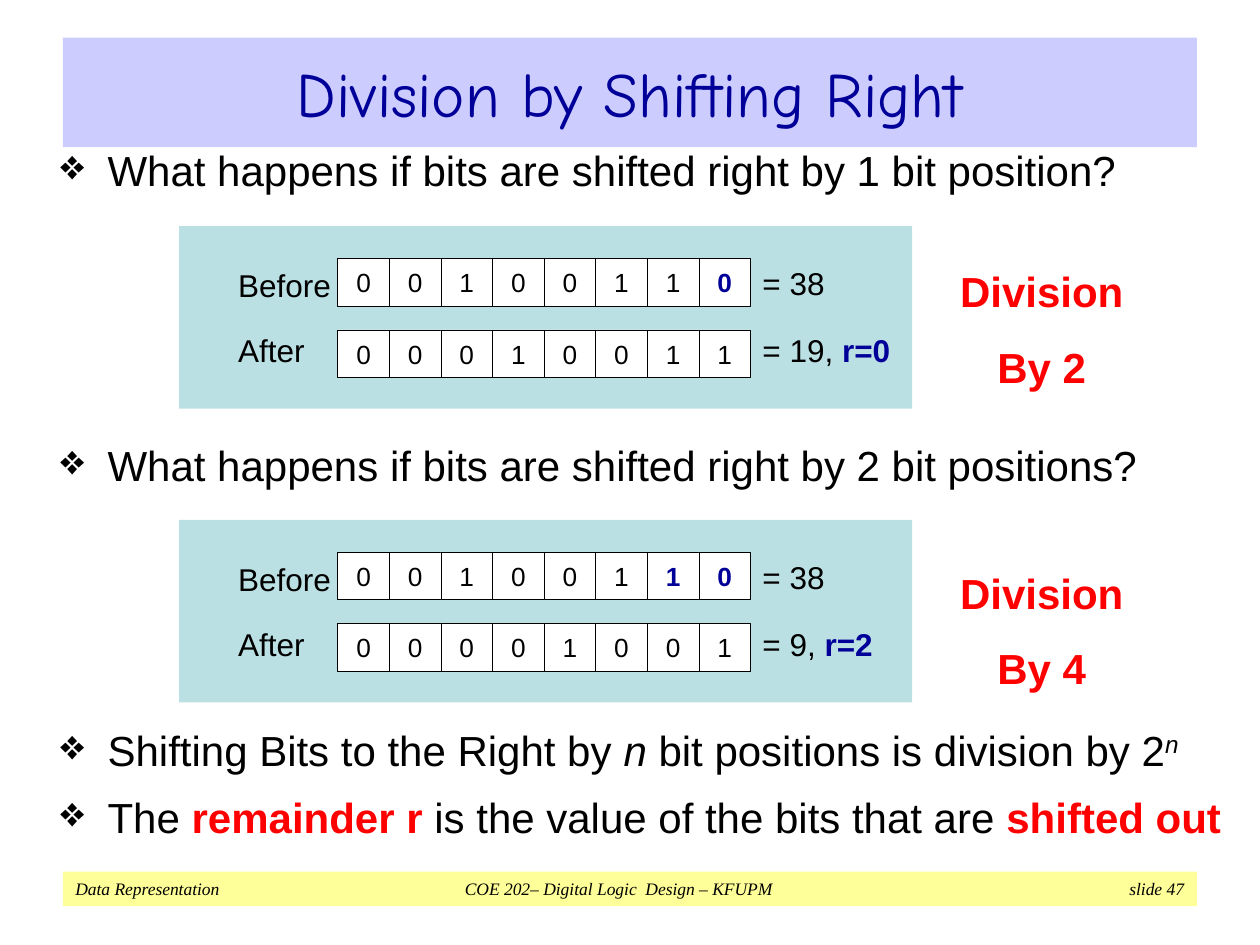
from lxml import etree
from pptx import Presentation
from pptx import util as u
from pptx.dml import color
from pptx.enum import shapes, text
from pptx.oxml import ns

COLORS = {"black": "000000", "white": "FFFFFF", "navy": "000099", "red": "FF0000",
          "title": "CCCCFF", "panel": "BBE0E3", "footer": "FFFF99"}


def add_box(parent, left, top, width, height, fill=None, inset=0, wrap=True):
    position = [u.Cm(value) for value in (left, top, width, height)]
    if fill:
        shape = parent.add_shape(shapes.MSO_SHAPE.RECTANGLE, *position)
        shape.shadow.inherit = False
        shape.fill.solid()
        shape.fill.fore_color.rgb = color.RGBColor.from_string(COLORS[fill])
        shape.line.fill.background()
    else:
        shape = parent.add_textbox(*position)
    frame = shape.text_frame
    frame.word_wrap = wrap
    frame.vertical_anchor = text.MSO_ANCHOR.TOP
    frame.margin_left = frame.margin_right = u.Cm(inset)
    frame.margin_top = frame.margin_bottom = u.Cm(inset / 2)
    return shape


def write(paragraph, pieces, size, font="Arial", align=text.PP_ALIGN.LEFT):
    paragraph.alignment = align
    for words, hue, style in pieces:
        run = paragraph.add_run()
        run.text = words
        run.font.name = font
        run.font.size = u.Pt(size)
        run.font.color.rgb = color.RGBColor.from_string(COLORS[hue])
        run.font.bold = "bold" in style
        run.font.italic = "italic" in style
        if "super" in style:
            run.font._element.set("baseline", "30000")


presentation = Presentation()
presentation.slide_width = u.Cm(25.4)
presentation.slide_height = u.Cm(19.05)
slide = presentation.slides.add_slide(presentation.slide_layouts[6])

footer = add_box(slide.shapes, 1.27, 17.57, 22.86, 0.7, "footer", 0.25)
paragraph = footer.text_frame.paragraphs[0]
footer_text = "Data Representation\tCOE 202– Digital Logic  Design – KFUPM\tslide 47"
write(paragraph, [(footer_text, "black", "italic")], 10, "Times New Roman")
tabs = etree.SubElement(paragraph._p.get_or_add_pPr(), ns.qn("a:tabLst"))
for position, kind in ((10.95, "ctr"), (22.35, "r")):
    etree.SubElement(tabs, ns.qn("a:tab"), pos=str(u.Cm(position)), algn=kind)

title = add_box(slide.shapes, 1.27, 0.76, 22.86, 2.21, "title", 0.25)
title.text_frame.vertical_anchor = text.MSO_ANCHOR.MIDDLE
write(title.text_frame.paragraphs[0], [("Division by Shifting Right", "navy", "")],
      36, "Comic Neue", text.PP_ALIGN.CENTER)

bullet_blocks = [
    (2.79, 23.16, 1.45,
     [[("What happens if bits are shifted right by 1 bit position?", "black", "")]]),
    (8.74, 23.16, 1.45,
     [[("What happens if bits are shifted right by 2 bit positions?", "black", "")]]),
    (14.48, 24.23, 2.87,
     [[("Shifting Bits to the Right by ", "black", ""), ("n", "black", "italic"),
       (" bit positions is division by 2", "black", ""), ("n", "black", "italic super")],
      [("The ", "black", ""), ("remainder r ", "red", "bold"),
       ("is the value of the bits that are ", "black", ""), ("shifted out", "red", "bold")]]),
]
for top, width, height, lines in bullet_blocks:
    frame = add_box(slide.shapes, 0.97, top, width, height, inset=0.25).text_frame
    for index, pieces in enumerate(lines):
        paragraph = frame.add_paragraph() if index else frame.paragraphs[0]
        write(paragraph, pieces, 24)
        paragraph.space_before = u.Pt(9.6)
        properties = paragraph._p.get_or_add_pPr()
        properties.set("marL", str(u.Cm(0.95)))
        properties.set("indent", str(u.Cm(-0.95)))
        etree.SubElement(properties, ns.qn("a:buChar"), char="❖")

examples = [
    (4.56, 4.72, "By 2", 1, "00100110", "00010011", "= 19, ", "r=0"),
    (10.48, 10.8, "By 4", 2, "00100110", "00001001", "= 9, ", "r=2"),
]
for top, label_top, divisor, shift, before, after, quotient, remainder in examples:
    panel = slide.shapes.add_group_shape().shapes
    add_box(panel, 3.61, top, 14.78, 3.68, "panel")
    for row_top, bits, lost in ((top + 0.65, before, shift), (top + 2.09, after, 0)):
        for column, bit in enumerate(bits):
            cell = add_box(panel, 6.81 + 1.04 * column, row_top, 1.04, 0.96, "white")
            cell.line.color.rgb = color.RGBColor.from_string(COLORS["black"])
            cell.line.width = u.Pt(0.38)
            cell.text_frame.vertical_anchor = text.MSO_ANCHOR.MIDDLE
            hue, style = ("navy", "bold") if column >= len(bits) - lost else ("black", "")
            write(cell.text_frame.paragraphs[0], [(bit, hue, style)], 15,
                  align=text.PP_ALIGN.CENTER)
    captions = [
        (4.8, 0.8, 1.88, [("Before", "black", "")]),
        (4.8, 2.12, 1.35, [("After", "black", "")]),
        (15.37, 0.76, 1.27, [("= 38", "black", "")]),
        (15.37, 2.12, 2.72, [(quotient, "black", ""), (remainder, "navy", "bold")]),
    ]
    for left, offset, width, pieces in captions:
        caption = add_box(panel, left, top + offset, width, 0.76, wrap=False)
        write(caption.text_frame.paragraphs[0], pieces, 18)

    frame = add_box(slide.shapes, 19.08, label_top, 3.84, 3.33, inset=0.25, wrap=False).text_frame
    for index, words in enumerate(("Division", divisor)):
        paragraph = frame.add_paragraph() if index else frame.paragraphs[0]
        write(paragraph, [(words, "red", "bold")], 24, align=text.PP_ALIGN.CENTER)
        paragraph.line_spacing = 1.5

presentation.save("out.pptx")
